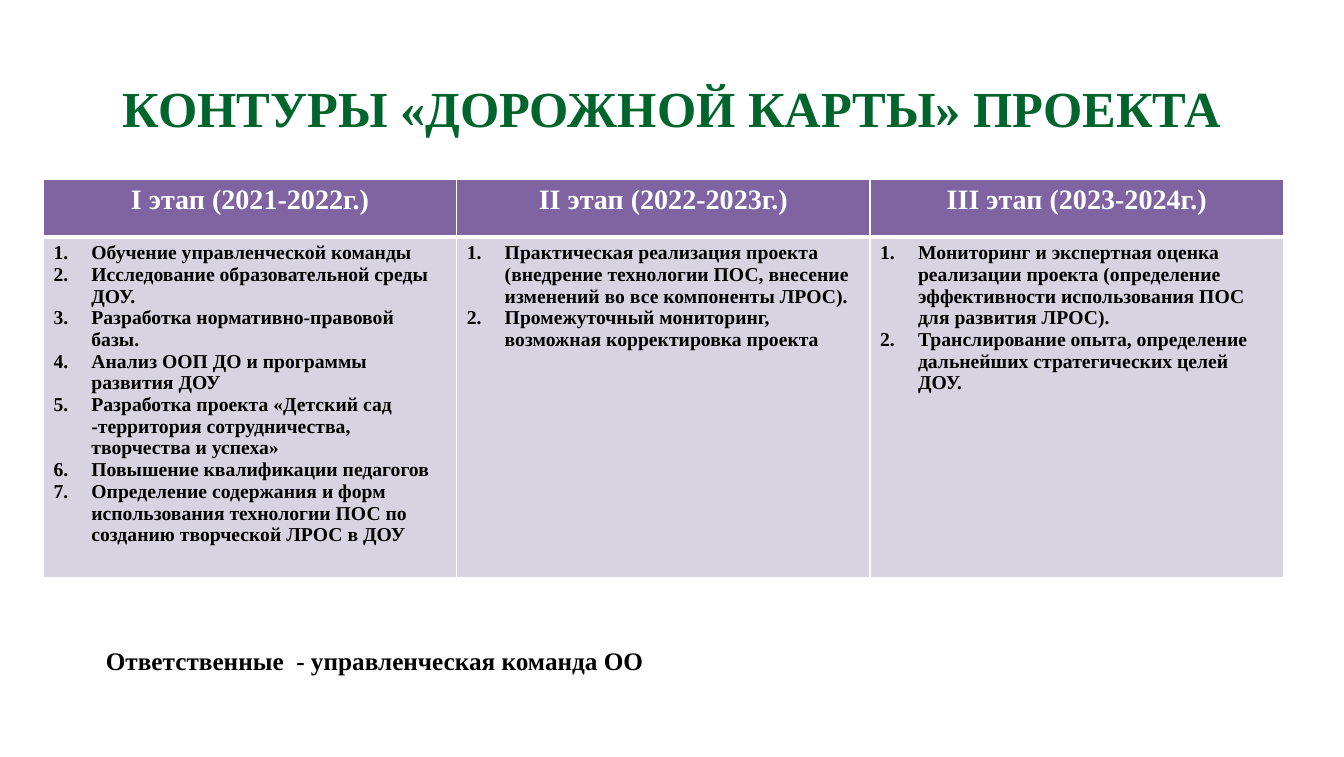
from lxml import etree
from pptx import Presentation
from pptx.dml.color import RGBColor as RGB
from pptx.enum.text import MSO_ANCHOR as Anchor, MSO_AUTO_SIZE as AutoSize, PP_ALIGN as Align
from pptx.oxml.ns import qn
from pptx.util import Inches, Pt

THEME = {
    "font": "Times New Roman",
    "green": "00642D", "purple": "8064A2", "lilac": "D8D3E0",
    "white": "FFFFFF", "black": "000000",
    "title": 36, "head": 20, "list": 14, "note": 18,
}

STAGES = {
    "I этап (2021-2022г.)": [
        "Обучение управленческой команды",
        "Исследование образовательной среды ДОУ.",
        "Разработка нормативно-правовой базы.",
        "Анализ ООП ДО и программы развития ДОУ",
        "Разработка проекта «Детский сад -территория сотрудничества, творчества и успеха»",
        "Повышение квалификации педагогов",
        "Определение содержания и форм использования технологии ПОС по созданию творческой ЛРОС в ДОУ",
    ],
    "II этап (2022-2023г.)": [
        "Практическая реализация проекта (внедрение технологии ПОС, внесение изменений во все компоненты ЛРОС).",
        "Промежуточный мониторинг, возможная корректировка проекта",
    ],
    "III этап (2023-2024г.)": [
        "Мониторинг и экспертная оценка реализации проекта (определение эффективности использования ПОС для развития ЛРОС).",
        "Транслирование опыта, определение дальнейших стратегических целей ДОУ.",
    ],
}


def style_text(tf, size, color, align=Align.LEFT):
    for p in tf.paragraphs:
        p.alignment = align
        for r in p.runs:
            r.font.name, r.font.size, r.font.bold = THEME["font"], Pt(size), True
            r.font.color.rgb = RGB.from_string(THEME[color])


def style_cell(cell, fill, **edges):
    tcPr = cell._tc.get_or_add_tcPr()
    for edge in ("lnL", "lnR", "lnT", "lnB"):
        ln = etree.SubElement(tcPr, qn(f"a:{edge}"), w=str(Pt(edges.get(edge, 1))))
        line_fill = etree.SubElement(ln, qn("a:solidFill"))
        etree.SubElement(line_fill, qn("a:srgbClr"), val=THEME["white"])
    cell.fill.solid()
    cell.fill.fore_color.rgb = RGB.from_string(THEME[fill])


prs = Presentation()
prs.slide_width, prs.slide_height = Inches(13.31), Inches(7.5)
s = prs.slides.add_slide(prs.slide_layouts[5])

# Title
title = s.shapes.title
title.left, title.top = 0, Inches(0.76)
title.width, title.height = prs.slide_width, Inches(0.73)
tf = title.text_frame
tf.text = "КОНТУРЫ «ДОРОЖНОЙ КАРТЫ» ПРОЕКТА"
tf.margin_left = tf.margin_right = tf.margin_top = tf.margin_bottom = 0
tf.vertical_anchor, tf.auto_size = Anchor.TOP, AutoSize.NONE
style_text(tf, THEME["title"], "green", Align.CENTER)

# Table of stages
table = s.shapes.add_table(2, len(STAGES), Inches(0.43), Inches(1.78),
                           Inches(12.28), Inches(3.94)).table
table.rows[0].height, table.rows[1].height = Inches(0.57), Inches(3.37)
for col, (stage, steps) in enumerate(STAGES.items()):
    head, body = table.cell(0, col), table.cell(1, col)
    head.text = stage
    style_cell(head, "purple", lnB=3)
    style_text(head.text_frame, THEME["head"], "white", Align.CENTER)

    body.text = "\n".join(steps)
    style_cell(body, "lilac", lnT=3)
    # Numbered steps with a hanging indent
    for p in body.text_frame.paragraphs:
        pPr = p._p.get_or_add_pPr()
        pPr.set("marL", str(Inches(0.375)))
        pPr.set("indent", str(-Inches(0.375)))
        color = etree.SubElement(pPr, qn("a:buClr"))
        etree.SubElement(color, qn("a:srgbClr"), val=THEME["black"])
        etree.SubElement(pPr, qn("a:buFont"), typeface="+mj-lt")
        etree.SubElement(pPr, qn("a:buAutoNum"), type="arabicPeriod")
    style_text(body.text_frame, THEME["list"], "black")

# Responsible team
note = s.shapes.add_textbox(Inches(0.95), Inches(6.34), Inches(11.19), Inches(0.4))
note.text_frame.word_wrap = True
note.text_frame.text = "Ответственные  - управленческая команда ОО"
style_text(note.text_frame, THEME["note"], "black")

prs.save("out.pptx")
